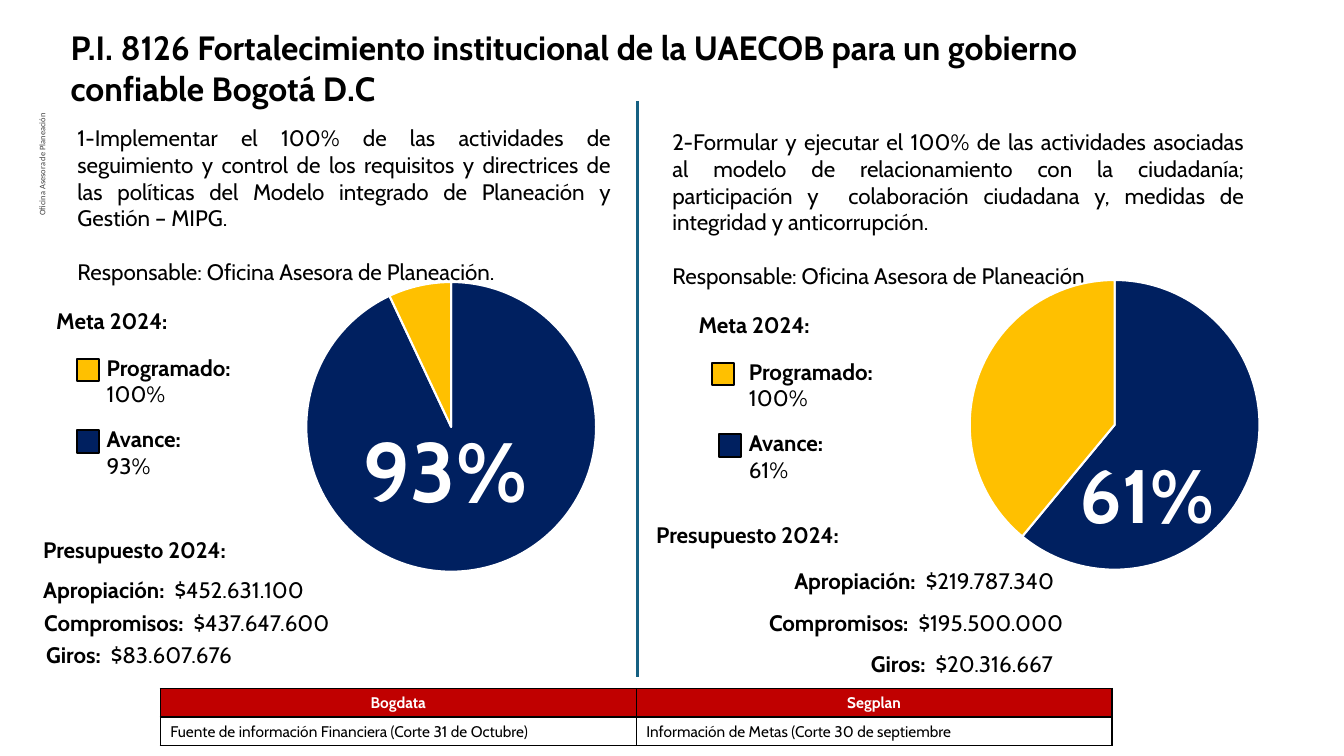
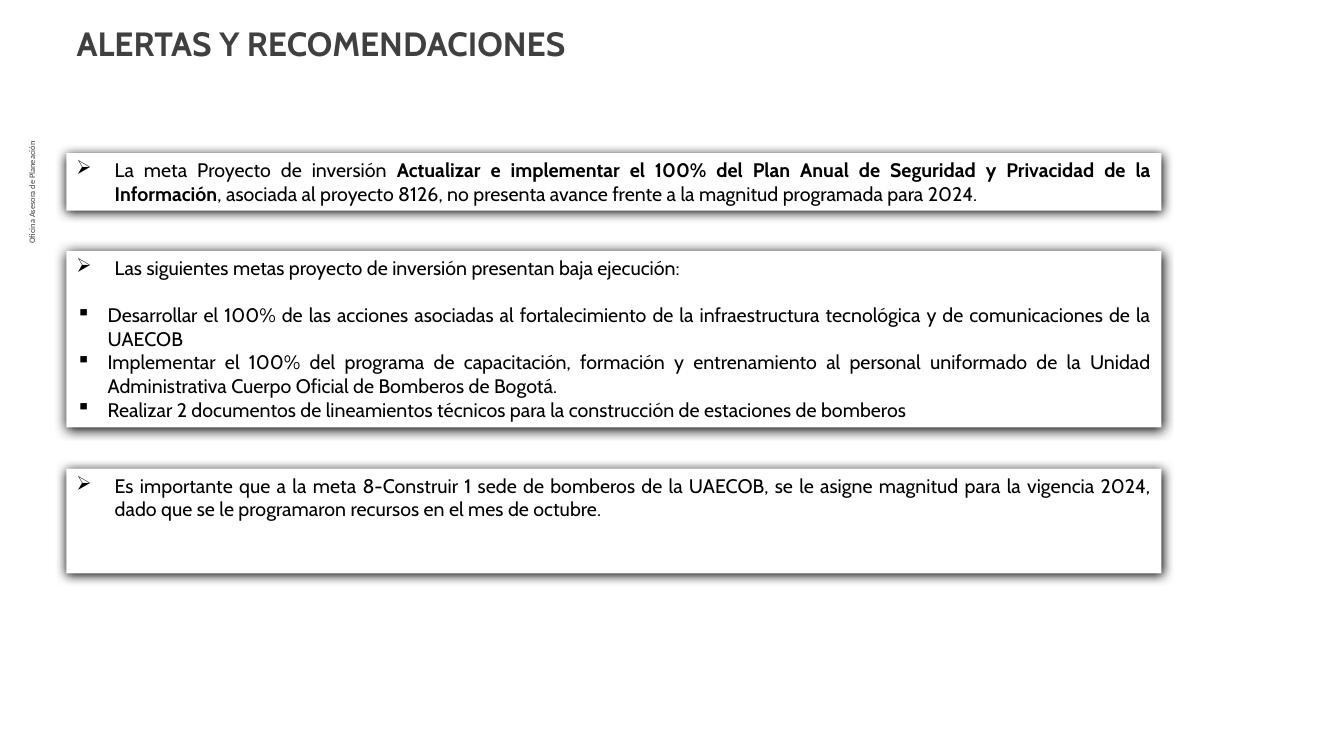
from lxml.etree import SubElement
from pptx import Presentation
from pptx.chart.data import CategoryChartData
from pptx.dml.color import RGBColor
from pptx.enum.chart import XL_CHART_TYPE
from pptx.enum.shapes import MSO_CONNECTOR, MSO_SHAPE
from pptx.enum.text import MSO_ANCHOR, PP_ALIGN
from pptx.oxml.ns import qn
from pptx.util import Inches, Pt

# Shared style
FONT = "Cabin"
BLACK, WHITE, GRAY = "000000", "FFFFFF", "404040"
NAVY, GOLD, RED, TEAL = "002060", "FFC000", "C00000", "156082"
JUST, LEFT, MID, RIGHT = (PP_ALIGN.JUSTIFY, PP_ALIGN.LEFT,
                          PP_ALIGN.CENTER, PP_ALIGN.RIGHT)


def color(code):
    return RGBColor.from_string(code)


def style(font, size, code=BLACK, bold=False, name=FONT):
    font.name, font.size, font.bold = name, Pt(size), bold
    font.color.rgb = color(code)


def write(para, parts, size, code=BLACK, align=JUST, name=FONT):
    """Fill a paragraph with (text, bold) parts."""
    para.alignment = align
    for text, bold in parts:
        run = para.add_run()
        run.text = text
        style(run.font, size, code, bold, name)


def label(slide, x, y, w, h, lines, size=16, code=BLACK, align=JUST, name=FONT):
    """Place a text box; each line is a list of (text, bold) parts."""
    box = slide.shapes.add_textbox(Inches(x), Inches(y), Inches(w), Inches(h))
    frame = box.text_frame
    frame.word_wrap = True
    for i, parts in enumerate(lines):
        para = frame.add_paragraph() if i else frame.paragraphs[0]
        write(para, parts, size, code, align, name)
    return box


def rect(slide, x, y, w, h, fill):
    box = slide.shapes.add_shape(MSO_SHAPE.RECTANGLE, Inches(x), Inches(y),
                                 Inches(w), Inches(h))
    box.shadow.inherit = False
    box.fill.solid()
    box.fill.fore_color.rgb = color(fill)
    return box


def start(deck, text, box, code, side):
    """Add a slide with its title and the upright office label."""
    slide = deck.slides.add_slide(deck.slide_layouts[5])
    title = slide.shapes.title
    title.left, title.top, title.width, title.height = map(Inches, box)
    frame = title.text_frame
    frame.text = text
    frame.word_wrap = True
    frame.vertical_anchor = MSO_ANCHOR.TOP
    para = frame.paragraphs[0]
    para.alignment = LEFT
    style(para.runs[0].font, 24, code, True)

    x, y = side
    tag = label(slide, x, y, 2.59, 0.18, [[("Oficina Asesora de Planeación ", False)]],
                6, GRAY, RIGHT, "Calibri")
    tag.rotation = 270
    frame = tag.text_frame
    frame.margin_left = frame.margin_right = Inches(0.07)
    frame.margin_top = frame.margin_bottom = Inches(0.04)
    return slide


def pie(slide, x, y, done):
    data = CategoryChartData()
    data.categories = ["1", "2"]
    data.add_series("Series 1", [done, 100 - done])
    chart = slide.shapes.add_chart(XL_CHART_TYPE.PIE, Inches(x), Inches(y),
                                   Inches(3.15), Inches(3.23), data).chart
    chart.has_legend = chart.has_title = False
    style(chart.font, 10)
    plot = chart.plots[0]
    plot.vary_by_categories = True
    for i, code in enumerate([NAVY, GOLD]):
        form = plot.series[0].points[i].format
        form.fill.solid()
        form.fill.fore_color.rgb = color(code)
        form.line.color.rgb = color(WHITE)
        form.line.width = Pt(1.5)


def panel(slide, left, top, goal, done, costs, spot):
    """Draw one goal: text, pie, key and budget, from its top left corner."""
    # Goal and office in charge
    dx, wide = spot["goal"]
    office = "Responsable: Oficina Asesora de Planeación."
    box = label(slide, left + dx, top, wide, 1.99,
                [[(goal, False)], [(office, False)]])
    box.text_frame.paragraphs[1].line_spacing = 2.0

    # Pie and its figure
    dx, dy = spot["pie"]
    pie(slide, left + dx, top + dy, done)
    dx, dy, size = spot["figure"]
    label(slide, left + dx, top + dy, 1.89, 1.1, [[(f"{done}%", True)]],
          size, WHITE, MID)

    # Key
    dx = spot["key"]
    label(slide, left + dx, top + 1.82, 1.87, 0.37, [[("Meta 2024:", True)]])
    keys = [("Programado:", 100, GOLD), ("Avance:", done, NAVY)]
    for i, (name, value, code) in enumerate(keys):
        y = top + 2.28 + 0.71 * i
        label(slide, left + dx + 0.5, y, 1.82, 0.64,
              [[(name, True)], [(f"{value}%", False)]])
        mark = rect(slide, left + spot["marks"][i], y + 0.1, 0.22, 0.22, code)
        mark.line.color.rgb = color(BLACK)
        mark.line.width = Pt(1.5)

    # Budget
    label(slide, left, top + spot["head"], 2.72, 0.37,
          [[("Presupuesto 2024:", True)]])
    first, step = spot["rows"]
    names = ["Apropiación: ", "Compromisos: ", "Giros: "]
    for i, (name, cost) in enumerate(zip(names, costs)):
        label(slide, left + spot["costs"][i], top + first + step * i, 3.73, 0.37,
              [[(name, True), (" " + cost, False)]])


def edge(cell):
    """Give a cell thin black borders."""
    props = cell._tc.get_or_add_tcPr()
    for side in ("a:lnL", "a:lnR", "a:lnT", "a:lnB"):
        line = SubElement(props, qn(side), w=str(Pt(1)))
        fill = SubElement(line, qn("a:solidFill"))
        SubElement(fill, qn("a:srgbClr"), val=BLACK)


def sources(slide, x, y, w, rows):
    grid = slide.shapes.add_table(len(rows), 2, Inches(x), Inches(y),
                                  Inches(w), Inches(0.57)).table
    grid.horz_banding = False
    for r, row in enumerate(rows):
        grid.rows[r].height = Inches(0.28)
        for c, text in enumerate(row):
            cell = grid.cell(r, c)
            edge(cell)
            if r:
                cell.fill.background()
            else:
                cell.fill.solid()
                cell.fill.fore_color.rgb = color(RED)
            write(cell.text_frame.paragraphs[0], [(text, r == 0)], 11,
                  BLACK if r else WHITE, LEFT if r else MID)


def card(slide, x, y, w, h, items):
    """Draw a shadowed box of bulleted (mark, parts) items."""
    box = rect(slide, x, y, w, h, WHITE)
    box.line.fill.background()
    glow = SubElement(box._element.spPr.find(qn("a:effectLst")), qn("a:outerShdw"),
                      blurRad=str(Pt(8.5)), dist=str(Pt(1)), dir="5400000",
                      algn="t", rotWithShape="0")
    SubElement(glow, qn("a:srgbClr"), val=BLACK)
    frame = box.text_frame
    frame.word_wrap = True
    frame.vertical_anchor = MSO_ANCHOR.TOP
    last = None
    for i, (mark, parts) in enumerate(items):
        para = frame.add_paragraph() if i else frame.paragraphs[0]
        props = para._p.get_or_add_pPr()
        indent = Inches(0.38 if mark == "➢" else 0.31)
        props.set("marL", str(indent))
        props.set("indent", str(-indent))
        SubElement(props, qn("a:buChar"), char=mark)
        if last and mark != last:
            para.space_before = Pt(17)
        write(para, parts, 14)
        last = mark


def goals(deck):
    slide = start(deck, "P.I. 8126 Fortalecimiento institucional de la UAECOB para "
                  "un gobierno confiable Bogotá D.C",
                  (0.6, 0.22, 10.3, 0.91), BLACK, (-0.88, 2.24))
    # Divider
    line = slide.shapes.add_connector(MSO_CONNECTOR.STRAIGHT, Inches(6.32), Inches(1),
                                      Inches(6.32), Inches(6.72))
    line.line.color.rgb = color(TEAL)
    line.line.width = Pt(2.25)
    SubElement(line._element.spPr, qn("a:effectLst"))

    panel(slide, 0.33, 1.18,
          "1-Implementar el 100% de las actividades de seguimiento y control de los "
          "requisitos y directrices de las políticas del Modelo integrado de "
          "Planeación y Gestión – MIPG.",
          93, ["$452.631.100", "$437.647.600", "$83.607.676"],
          {"goal": (0.34, 5.49), "pie": (2.57, 1.44), "figure": (3.14, 2.92, 60),
           "key": 0.13, "marks": (0.43, 0.43), "head": 4.09,
           "rows": (4.49, 0.32), "costs": (0, 0.01, 0.03)})
    panel(slide, 6.41, 1.22,
          "2-Formular y ejecutar el 100% de las actividades asociadas al modelo de "
          "relacionamiento con la ciudadanía; participación y  colaboración "
          "ciudadana y, medidas de integridad y anticorrupción.",
          61, ["$219.787.340", "$195.500.000", "$20.316.667"],
          {"goal": (0.16, 5.87), "pie": (3.07, 1.38), "figure": (4.02, 3.17, 54),
           "key": 0.42, "marks": (0.65, 0.72), "head": 3.9,
           "rows": (4.36, 0.41), "costs": (1.37, 1.12, 2.13)})
    sources(slide, 1.59, 6.83, 9.44, [
        ["Bogdata", "Segplan"],
        ["Fuente de información Financiera (Corte 31 de Octubre)",
         "Información de Metas (Corte 30 de septiembre"]])


def alerts(deck):
    slide = start(deck, "ALERTAS Y RECOMENDACIONES",
                  (0.66, 0.18, 7.22, 0.5), GRAY, (-0.98, 2.52))
    cards = [
        (1.52, 0.57, [("➢", [
            ("La meta Proyecto de inversión ", False),
            ("Actualizar e implementar el 100% del Plan Anual de Seguridad y "
             "Privacidad de la Información", True),
            (", asociada al proyecto 8126, no presenta avance frente a la magnitud "
             "programada para 2024.", False)])]),
        (2.49, 1.75, [
            ("➢", [("Las siguientes metas proyecto de inversión presentan baja "
                    "ejecución:", False)]),
            ("▪", [("Desarrollar el 100% de las acciones asociadas al "
                    "fortalecimiento de la infraestructura tecnológica y de "
                    "comunicaciones de la UAECOB", False)]),
            ("▪", [("Implementar el 100% del programa de capacitación, formación y "
                    "entrenamiento al personal uniformado de la Unidad "
                    "Administrativa Cuerpo Oficial de Bomberos de Bogotá.", False)]),
            ("▪", [("Realizar 2 documentos de lineamientos técnicos para la "
                    "construcción de estaciones de bomberos", False)])]),
        (4.65, 1.04, [("➢", [
            ("Es importante que a la meta 8-Construir 1 sede de bomberos de la "
             "UAECOB, se le asigne magnitud para la vigencia 2024, dado que se le "
             "programaron recursos en el mes de octubre.", False)])]),
    ]
    for top, high, items in cards:
        card(slide, 0.66, top, 10.86, high, items)


def main():
    deck = Presentation()
    deck.slide_width, deck.slide_height = Inches(13.33), Inches(7.5)
    goals(deck)
    alerts(deck)
    deck.save("out.pptx")


if __name__ == "__main__":
    main()
